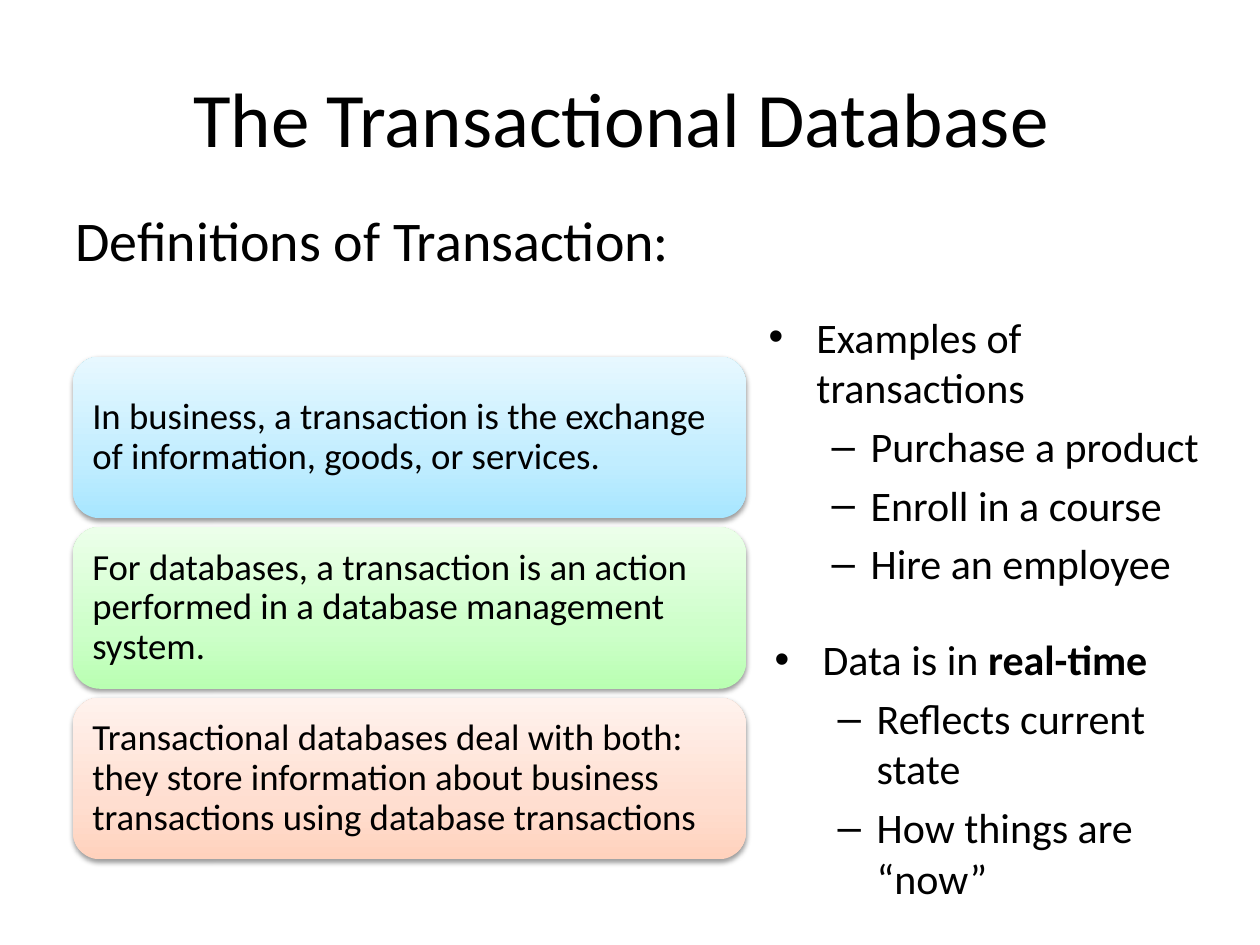
from copy import deepcopy
from dataclasses import dataclass

from lxml import etree
from pptx import Presentation
from pptx.dml.color import RGBColor
from pptx.enum.shapes import MSO_SHAPE
from pptx.enum.text import MSO_ANCHOR, MSO_AUTO_SIZE, PP_ALIGN
from pptx.oxml.ns import qn
from pptx.util import Inches, Pt

ROUNDED = MSO_SHAPE.ROUNDED_RECTANGLE
MIDDLE, TOP = MSO_ANCHOR.MIDDLE, MSO_ANCHOR.TOP
LEFT, CENTER = PP_ALIGN.LEFT, PP_ALIGN.CENTER
NO_AUTOFIT = MSO_AUTO_SIZE.NONE


@dataclass(frozen=True)
class Theme:
    font: str = "Calibri"
    ink: str = "000000"
    title: int = 44
    heading: int = 32
    bullet: int = 24
    card: int = 21
    blue: tuple = ("A7E6FF", "C1EDFF", "E7F8FF")
    green: tuple = ("B9FFB2", "CDFFC9", "ECFFEA")
    orange: tuple = ("FFD2BD", "FFDED0", "FFF2ED")


THEME = Theme()
GRADIENT_POSITIONS = (0, 0.35, 1)
# Marker, left margin and hanging indent of each list level
LIST_LEVELS = (("•", 0.38, -0.38), ("–", 0.81, -0.31))

DEFINITIONS = [
    ("In business, a transaction is the exchange of information, goods, or services.", THEME.blue),
    ("For databases, a transaction is an action performed in a database management system.",
     THEME.green),
    ("Transactional databases deal with both: they store information about business "
     "transactions using database transactions", THEME.orange),
]
# Each item is a level and its runs; a run is text and whether it is bold
EXAMPLES = [
    (0, [("Examples of transactions", False)]),
    (1, [("Purchase a product", False)]),
    (1, [("Enroll in a course", False)]),
    (1, [("Hire an employee", False)]),
]
REAL_TIME = [
    (0, [("Data is in ", False), ("real-time", True)]),
    (1, [("Reflects current state", False)]),
    (1, [("How things are “now”", False)]),
]


def place(shape, box):
    shape.left, shape.top, shape.width, shape.height = (Inches(length) for length in box)


def prepare_frame(shape, anchor=TOP):
    frame = shape.text_frame
    frame.word_wrap = True
    frame.auto_size = NO_AUTOFIT
    frame.vertical_anchor = anchor
    return frame


def add_run(paragraph, text, size, bold=False):
    run = paragraph.add_run()
    run.text = text
    run.font.name = THEME.font
    run.font.size = Pt(size)
    run.font.bold = bold
    run.font.color.rgb = RGBColor.from_string(THEME.ink)


def add_text_box(slide, box):
    return slide.shapes.add_textbox(*(Inches(length) for length in box))


def add_title(slide, box, text):
    title = slide.shapes.title
    place(title, box)
    paragraph = prepare_frame(title, MIDDLE).paragraphs[0]
    paragraph.alignment = CENTER
    add_run(paragraph, text, THEME.title)


def add_heading(slide, box, text):
    paragraph = prepare_frame(add_text_box(slide, box)).paragraphs[0]
    paragraph.space_before = Pt(0.2 * THEME.heading)
    add_run(paragraph, text, THEME.heading)


def set_bullet(paragraph, level):
    marker, margin, indent = LIST_LEVELS[level]
    paragraph.level = level
    properties = paragraph._p.get_or_add_pPr()
    properties.set("marL", str(Inches(margin)))
    properties.set("indent", str(Inches(indent)))
    etree.SubElement(properties, qn("a:buFont"), typeface="Arial")
    etree.SubElement(properties, qn("a:buChar"), char=marker)


def fill_list(shape, box, items):
    place(shape, box)
    frame = prepare_frame(shape)
    for number, (level, runs) in enumerate(items):
        paragraph = frame.add_paragraph() if number else frame.paragraphs[0]
        paragraph.space_before = Pt(0.2 * THEME.bullet)
        set_bullet(paragraph, level)
        for text, bold in runs:
            add_run(paragraph, text, THEME.bullet, bold=bold)


def set_gradient(shape, colors):
    """Fill from the bottom edge up with three colours."""
    shape.fill.gradient()
    shape.fill.gradient_angle = 90
    stop_list = shape._element.spPr.find(qn("a:gradFill")).find(qn("a:gsLst"))
    stop_list.append(deepcopy(stop_list[0]))
    for stop, position, color in zip(shape.fill.gradient_stops, GRADIENT_POSITIONS, colors):
        stop.position = position
        stop.color.rgb = RGBColor.from_string(color)


def set_soft_shadow(shape):
    shape.shadow.inherit = False
    effects = shape._element.spPr.find(qn("a:effectLst"))
    shadow = etree.SubElement(effects, qn("a:outerShdw"), blurRad=str(Pt(3.1)),
                              dist=str(Pt(1.6)), dir="5400000", rotWithShape="0")
    color = etree.SubElement(shadow, qn("a:srgbClr"), val="000000")
    etree.SubElement(color, qn("a:alpha"), val="38000")


def add_card(slide, box, text, colors):
    card = slide.shapes.add_shape(ROUNDED, *(Inches(length) for length in box))
    set_gradient(card, colors)
    card.line.fill.background()
    set_soft_shadow(card)
    frame = prepare_frame(card, MIDDLE)
    frame.margin_left = frame.margin_right = Inches(0.09)
    frame.margin_top = frame.margin_bottom = Inches(0.09)
    paragraph = frame.paragraphs[0]
    paragraph.alignment = LEFT
    paragraph.line_spacing = 0.9
    add_run(paragraph, text, THEME.card)


def add_card_stack(slide, box, cards, gap=0.07):
    left, top, width, height = box
    card_height = (height - gap * (len(cards) - 1)) / len(cards)
    for row, (text, colors) in enumerate(cards):
        card_top = top + row * (card_height + gap)
        add_card(slide, (left, card_top, width, card_height), text, colors)


def main():
    presentation = Presentation()
    presentation.slide_width, presentation.slide_height = Inches(10), Inches(7.5)
    slide = presentation.slides.add_slide(presentation.slide_layouts[1])
    add_title(slide, (0.5, 0.3, 9, 1.25), "The Transactional Database ")
    add_card_stack(slide, (0.58, 2.83, 5.34, 3.99), DEFINITIONS)
    fill_list(slide.placeholders[1], (6, 2.42, 3.75, 2.5), EXAMPLES)
    add_heading(slide, (0.5, 1.58, 8.17, 4.25), "Definitions of Transaction:")
    real_time_box = (6.05, 4.98, 3.75, 2.27)
    fill_list(add_text_box(slide, real_time_box), real_time_box, REAL_TIME)
    presentation.save("out.pptx")


if __name__ == "__main__":
    main()
